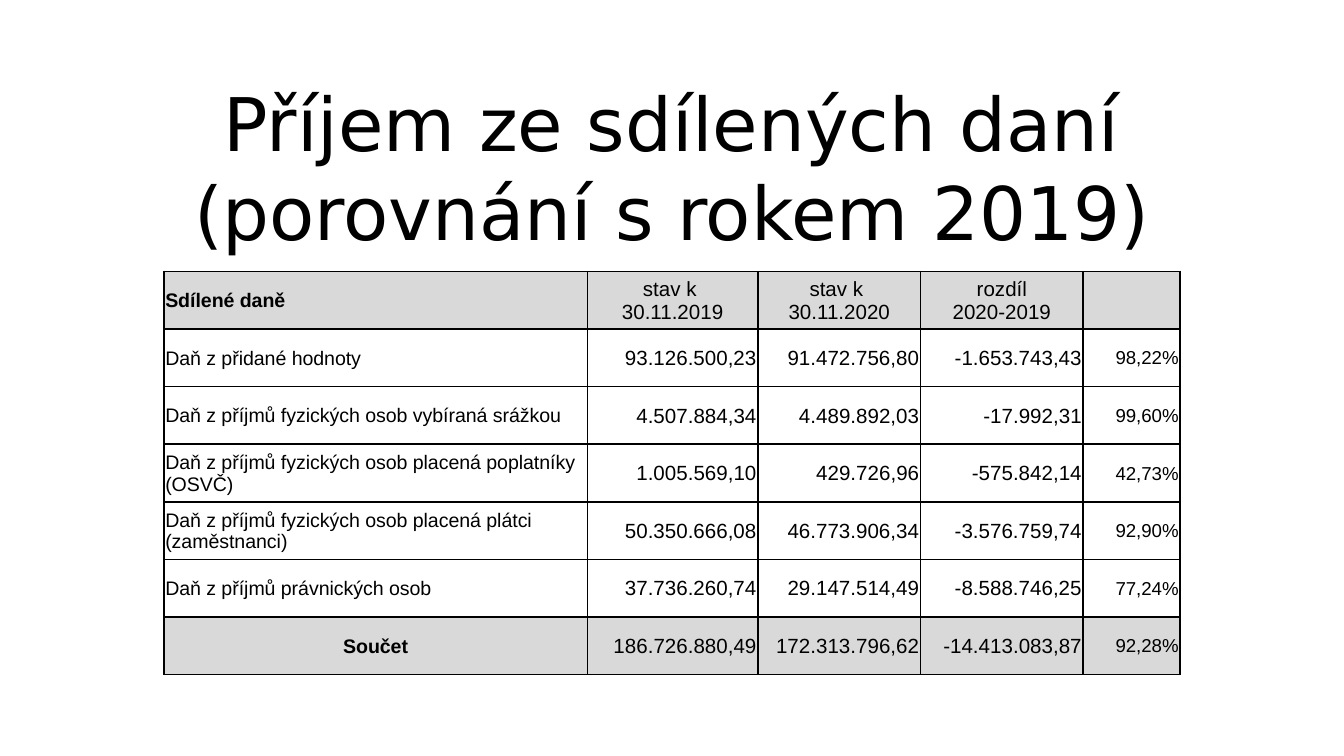
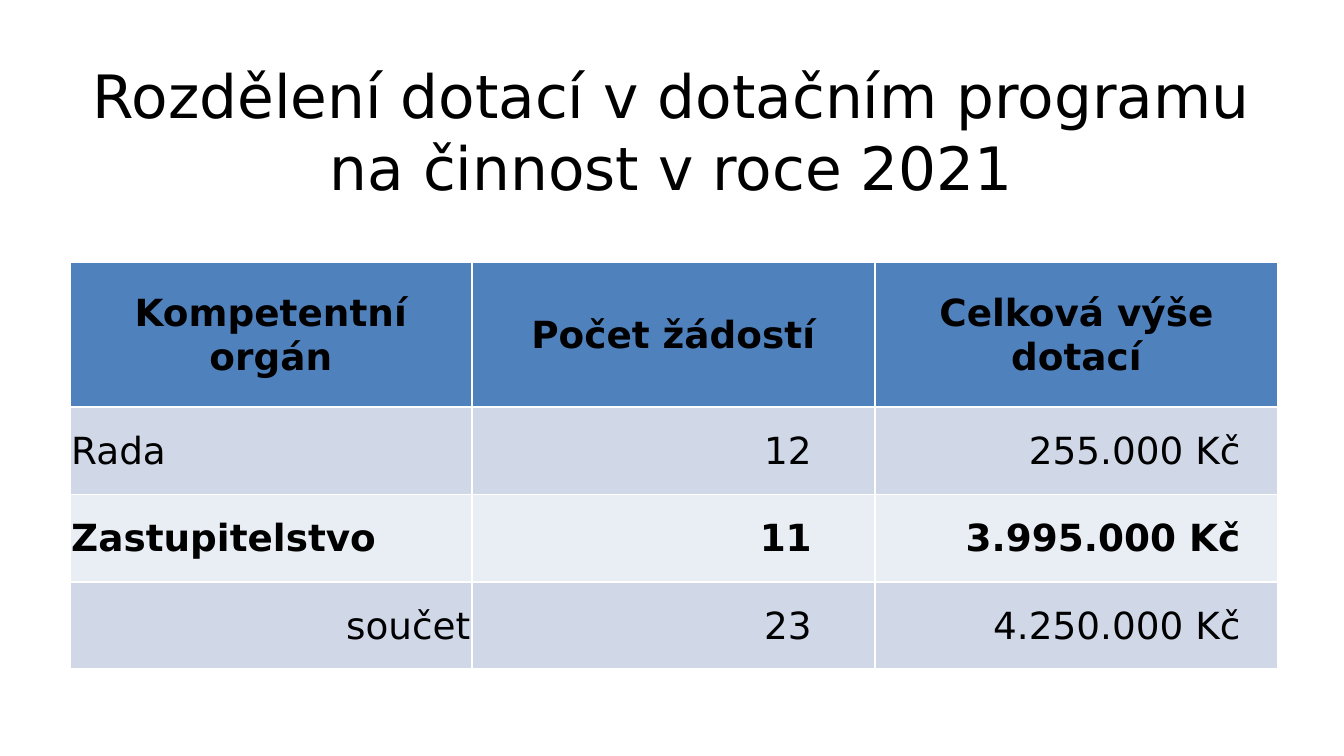
import copy

import pptx
import pptx.dml.color
import pptx.enum.text
import pptx.oxml
import pptx.oxml.ns
import pptx.util

Inches = pptx.util.Inches
BLACK, WHITE = "000000", "FFFFFF"
GREY, BLUE = "D9D9D9", "4F81BD"
BANDS = ["D0D8E8", "E9EDF4"]
SANS, TABLE_FONT = "DejaVu Sans", "Arial"
ALIGNMENTS = {
    "l": pptx.enum.text.PP_ALIGN.LEFT,
    "c": pptx.enum.text.PP_ALIGN.CENTER,
    "r": pptx.enum.text.PP_ALIGN.RIGHT,
}
CELL_INSET = 0.01

TAX_TITLE = "Příjem ze sdílených daní (porovnání s rokem 2019)"
TAX_ROWS = [
    ("Sdílené daně", "stav k \n30.11.2019", "stav k \n30.11.2020", "rozdíl\n2020-2019", ""),
    ("Daň z přidané hodnoty", "93.126.500,23", "91.472.756,80", "-1.653.743,43", "98,22%"),
    ("Daň z příjmů fyzických osob vybíraná srážkou",
     "4.507.884,34", "4.489.892,03", "-17.992,31", "99,60%"),
    ("Daň z příjmů fyzických osob placená poplatníky (OSVČ)",
     "1.005.569,10", "429.726,96", "-575.842,14", "42,73%"),
    ("Daň z příjmů fyzických osob placená plátci (zaměstnanci)",
     "50.350.666,08", "46.773.906,34", "-3.576.759,74", "92,90%"),
    ("Daň z příjmů právnických osob",
     "37.736.260,74", "29.147.514,49", "-8.588.746,25", "77,24%"),
    ("Součet", "186.726.880,49", "172.313.796,62", "-14.413.083,87", "92,28%"),
]
TAX_WIDTHS = [3.15, 1.27, 1.21, 1.21, 0.72]
TAX_SIZES = [10.5, 11, 11, 11, 10]
TAX_HEIGHT = 3

GRANT_TITLE = "Rozdělení dotací v dotačním programu\nna činnost v roce 2021"
GRANT_ROWS = [
    ("Kompetentní orgán", "Počet žádostí", "Celková výše dotací"),
    ("Rada", "12", "255.000 Kč"),
    ("Zastupitelstvo", "11", "3.995.000 Kč"),
    ("součet", "23", "4.250.000 Kč"),
]
GRANT_WIDTHS = [2.99, 3, 3]
GRANT_RIGHT_INSETS = [CELL_INSET, 0.47, 0.28]


def color(value):
    return pptx.dml.color.RGBColor.from_string(value)


def write(frame, text, size=18, font=SANS, bold=False, align="l", ink=BLACK):
    frame.word_wrap = True
    paragraph = frame.paragraphs[0]
    paragraph.text = text
    paragraph.alignment = ALIGNMENTS[align]
    for run in paragraph.runs:
        run.font.size = pptx.util.Pt(size)
        run.font.name = font
        run.font.bold = bold
        run.font.color.rgb = color(ink)
    for line_break in paragraph._p.findall(pptx.oxml.ns.qn("a:br")):
        line_break.insert(0, copy.deepcopy(paragraph.runs[0]._r.rPr))


def add_title(slide, text, top, height, size):
    title = slide.shapes.add_textbox(Inches(0.5), Inches(top), Inches(9), Inches(height))
    title.text_frame.vertical_anchor = pptx.enum.text.MSO_ANCHOR.MIDDLE
    write(title.text_frame, text, size=size, align="c")


def set_borders(cell, line):
    properties = cell._tc.get_or_add_tcPr()
    for side in "LRTB":
        properties.append(pptx.oxml.parse_xml(
            f'<a:ln{side} {pptx.oxml.ns.nsdecls("a")} w="{pptx.util.Pt(1)}">'
            f'<a:solidFill><a:srgbClr val="{line}"/></a:solidFill></a:ln{side}>'))


def add_table(slide, left, top, widths, heights, rows, line, style):
    table = slide.shapes.add_table(
        len(rows), len(widths), Inches(left), Inches(top),
        Inches(sum(widths)), Inches(sum(heights))).table
    table.first_row = table.horz_banding = False
    for column, width in zip(table.columns, widths):
        column.width = Inches(width)
    for row, height in zip(table.rows, heights):
        row.height = Inches(height)
    for r, texts in enumerate(rows):
        for c, text in enumerate(texts):
            cell = table.cell(r, c)
            fill, right_inset, text_format = style(r, c)
            set_borders(cell, line)
            cell.fill.solid()
            cell.fill.fore_color.rgb = color(fill)
            cell.vertical_anchor = pptx.enum.text.MSO_ANCHOR.MIDDLE
            cell.margin_left = cell.margin_top = Inches(CELL_INSET)
            cell.margin_right = Inches(right_inset)
            cell.margin_bottom = 0
            write(cell.text_frame, text, **text_format)


def tax_style(r, c):
    total = len(TAX_ROWS) - 1
    edge = r in (0, total)
    if c == 0:
        align = "c" if r == total else "l"
    else:
        align = "c" if r == 0 else "r"
    return GREY if edge else WHITE, CELL_INSET, dict(
        size=TAX_SIZES[c], font=TABLE_FONT, bold=edge and c == 0, align=align)


def grant_style(r, c):
    if r == 0:
        return BLUE, CELL_INSET, dict(size=20, bold=True, align="c")
    total = r == len(GRANT_ROWS) - 1
    return BANDS[(r - 1) % 2], GRANT_RIGHT_INSETS[c], dict(
        size=20, bold=r == 2, align="r" if c or total else "l")


def main():
    deck = pptx.Presentation()
    deck.slide_width = Inches(10)
    deck.slide_height = Inches(10 * 9 / 16)
    blank = deck.slide_layouts[6]

    taxes = deck.slides.add_slide(blank)
    add_title(taxes, TAX_TITLE, 0.61, 1.26, 39.6)
    add_table(taxes, 1.22, 2.02, TAX_WIDTHS, [TAX_HEIGHT / len(TAX_ROWS)] * len(TAX_ROWS),
              TAX_ROWS, BLACK, tax_style)

    grants = deck.slides.add_slide(blank)
    add_title(grants, GRANT_TITLE, 0.23, 1.48, 32)
    add_table(grants, 0.52, 1.95, GRANT_WIDTHS, [1.08] + [0.65] * 3,
              GRANT_ROWS, WHITE, grant_style)

    deck.save("out.pptx")


if __name__ == "__main__":
    main()
